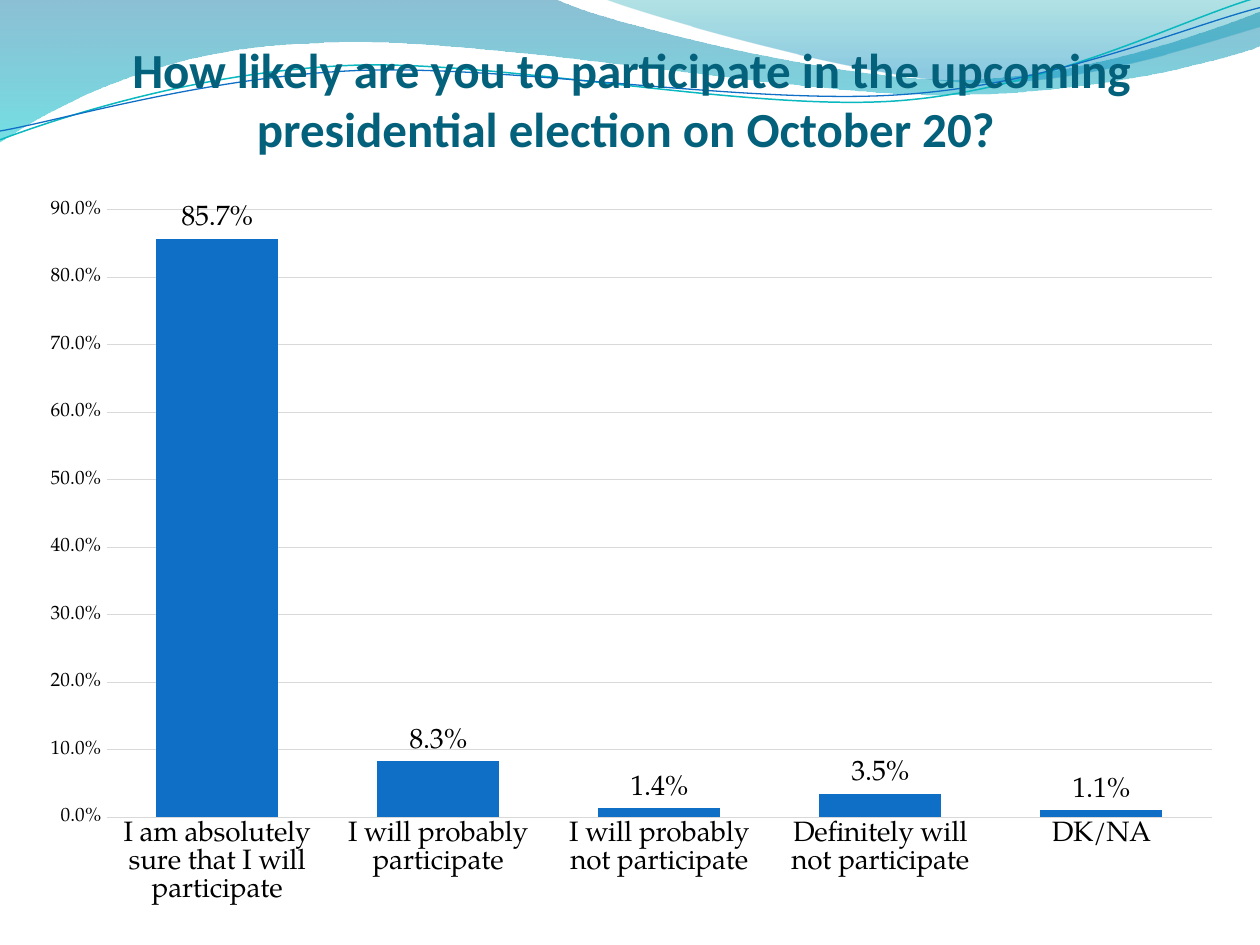
from math import cos, radians, sin

from lxml import etree
from pptx import Presentation
from pptx.chart.data import CategoryChartData
from pptx.dml.color import RGBColor
from pptx.enum.chart import XL_CHART_TYPE as ChartType, XL_LABEL_POSITION as LabelPosition
from pptx.enum.chart import XL_TICK_MARK as TickMark
from pptx.enum.text import MSO_ANCHOR, MSO_AUTO_SIZE, PP_ALIGN
from pptx.oxml.ns import qn
from pptx.util import Inches, Pt

COLORS = {
    "title": "04617B", "text": "000000", "bar": "0F6FC6", "grid": "D9D9D9",
    "teal line": "0AB8BF", "deep blue": "0074A1", "cyan": "00C6CF",
    "teal": "00A1A9", "blue": "008BBF",
}
CHART_FONT = "TeX Gyre Pagella"


def color(name):
    return RGBColor.from_string(COLORS[name])


def add_wave(slide, box, start, pieces, closed=False, rotation=0):
    """Draw an outline of lines (2 numbers) and Bezier curves (6 numbers), given as they show."""
    left, top, width, height = box
    builder = slide.shapes.build_freeform(Inches(left), Inches(top))
    builder.add_line_segments([(Inches(left + width), Inches(top + height))], close=closed)
    wave = builder.convert_to_shape()
    wave.shadow.inherit = False
    wave.rotation = rotation

    # Swap the straight segments for the real ones, turned back by the rotation
    outline = next(wave.element.iter(qn("a:path")))
    for segment in list(outline):
        outline.remove(segment)
    turn = radians(-rotation)
    for piece in [start, *pieces]:
        kind = "a:cubicBezTo" if len(piece) == 6 else "a:moveTo" if piece is start else "a:lnTo"
        segment = etree.SubElement(outline, qn(kind))
        for x, y in zip(piece[::2], piece[1::2]):
            dx, dy = x - left - width / 2, y - top - height / 2
            point = etree.SubElement(segment, qn("a:pt"))
            point.set("x", str(Inches(width / 2 + dx * cos(turn) - dy * sin(turn))))
            point.set("y", str(Inches(height / 2 + dx * sin(turn) + dy * cos(turn))))
    if closed:
        etree.SubElement(outline, qn("a:close"))
    return wave


deck = Presentation()
deck.slide_width, deck.slide_height = Inches(10), Inches(7.5)
slide = deck.slides.add_slide(deck.slide_layouts[5])

# Gradient bands: box, start, pieces, stops of (position, colour, opacity in percent)
bands = [
    ((-0.01, -0.01, 10.02, 1.14), (0, 0),
     [(4.4, -0.01), (4.76, 0.17, 6.64, 0.63, 7.58, 0.63), (8.53, 0.63, 9.58, 0.26, 10, 0.09),
      (10.01, 0.36), (9.83, 0.44, 8.7, 0.76, 7.46, 0.75), (6.22, 0.75, 3.82, 0.28, 2.57, 0.34),
      (1.29, 0.36, 0.46, 0.83, -0.01, 1.13), (0, 0)],
     [(0, "deep blue", 45), (1, "cyan", 55)]),
    ((4.79, -0.01, 5.21, 0.7), (4.79, -0.01),
     [(5.09, 0.11, 6.82, 0.62, 7.69, 0.65), (8.56, 0.69, 9.61, 0.32, 10, 0.21), (10, 0),
      (4.79, -0.01)],
     [(0, "teal", 30), (0.8, "blue", 45)]),
]
for box, start, pieces, stops in bands:
    band = add_wave(slide, box, start, pieces, closed=True)
    band.line.fill.background()
    band.fill.gradient()
    band.fill.gradient_angle = 270
    for stop, (position, name, opacity) in zip(band.fill.gradient_stops, stops):
        stop.position = position
        stop.color.rgb = color(name)
    for node, (position, name, opacity) in zip(band.element.spPr.iter(qn("a:srgbClr")), stops):
        etree.SubElement(node, qn("a:alpha")).set("val", str(opacity * 1000))

# Thin wavy lines
curves = [
    ((-0.02, 0.22, 10.02, 0.71), (0, 1.11),
     [(0.48, 0.93, 1.58, 0.57, 2.77, 0.52), (3.95, 0.47, 5.93, 0.89, 7.13, 0.8),
      (8.33, 0.71, 9.38, 0.15, 9.98, -0.02)], "teal line", 0.85),
    ((-0.02, 0.3, 10.03, 0.58), (0, 1.04),
     [(0.47, 0.96, 1.64, 0.61, 2.83, 0.56), (4.03, 0.51, 5.97, 0.84, 7.17, 0.75),
      (8.36, 0.67, 9.41, 0.21, 10, 0.06)], "bar", 0.75),
]
for box, start, pieces, name, width in curves:
    curve = add_wave(slide, box, start, pieces, rotation=357.3)
    curve.fill.background()
    curve.line.color.rgb = color(name)
    curve.line.width = Pt(width)

# Title, brought in front of the waves
title = slide.shapes.title
title.element.getparent().append(title.element)
title.left, title.top, title.width, title.height = (Inches(n) for n in (0.21, 0, 9.6, 1.25))
frame = title.text_frame
frame.text = "How likely are you to participate in the upcoming presidential election on October 20? "
frame.word_wrap = True
frame.auto_size = MSO_AUTO_SIZE.NONE
frame.vertical_anchor = MSO_ANCHOR.BOTTOM
frame.margin_left = frame.margin_right = frame.margin_bottom = 0
frame.margin_top = Inches(0.05)
para = frame.paragraphs[0]
para.alignment = PP_ALIGN.CENTER
font = para.runs[0].font
font.name, font.size, font.bold = "Calibri", Pt(28), True
font.color.rgb = color("title")

# Chart
data = CategoryChartData(number_format="0.0%")
data.categories = [
    "I am absolutely sure that I will participate", "I will probably participate",
    "I will probably not participate", "Definitely will not participate", "DK/NA",
]
data.add_series("Series 1", [0.857, 0.083, 0.014, 0.035, 0.011])
chart = slide.shapes.add_chart(ChartType.COLUMN_CLUSTERED, Inches(0.21), Inches(1.47),
                               Inches(9.6), Inches(5.83), data).chart
chart.has_legend = False
chart.has_title = False

plot = chart.plots[0]
plot.gap_width, plot.overlap = 81, -27
plot.vary_by_categories = False
series = plot.series[0]
series.format.fill.solid()
series.format.fill.fore_color.rgb = color("bar")
labels = series.data_labels
labels.show_value = True
labels.position = LabelPosition.OUTSIDE_END
labels.number_format, labels.number_format_is_linked = "0.0%", False

answers, shares = chart.category_axis, chart.value_axis
for axis in (answers, shares):
    axis.major_tick_mark = axis.minor_tick_mark = TickMark.NONE
shares.minimum_scale, shares.maximum_scale, shares.major_unit = 0, 0.9, 0.1
shares.tick_labels.number_format = "0.0%"
shares.tick_labels.number_format_is_linked = False
shares.format.line.fill.background()
for line in (answers.format.line, shares.major_gridlines.format.line):
    line.color.rgb = color("grid")
    line.width = Pt(0.75)

for font, size in ((chart.font, 16), (labels.font, 16),
                   (answers.tick_labels.font, 16), (shares.tick_labels.font, 11)):
    font.name, font.size = CHART_FONT, Pt(size)
    font.color.rgb = color("text")

deck.save("out.pptx")
